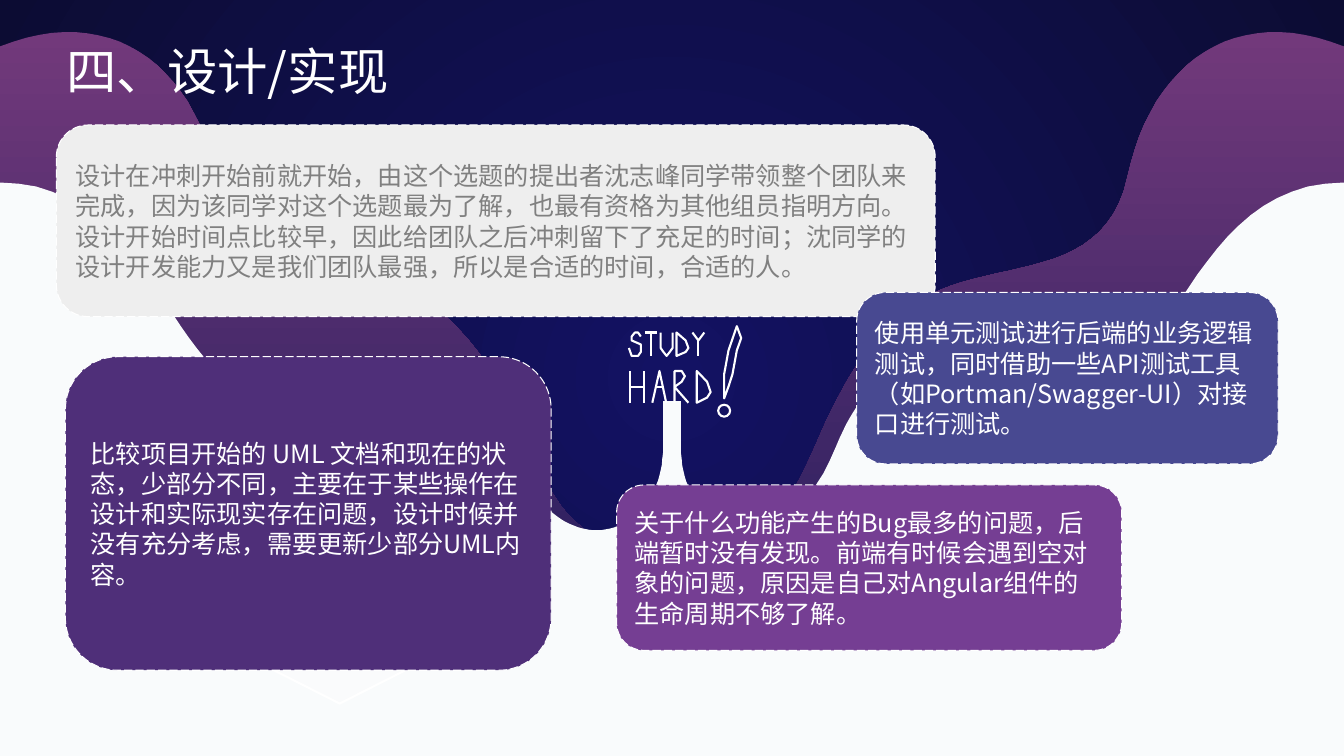
from math import cos, radians, sin

from lxml import etree
from pptx import Presentation
from pptx.dml.color import RGBColor
from pptx.enum.dml import MSO_LINE
from pptx.enum.shapes import MSO_SHAPE
from pptx.enum.text import MSO_ANCHOR, MSO_AUTO_SIZE, PP_ALIGN
from pptx.oxml import parse_xml
from pptx.oxml.ns import nsdecls, qn
from pptx.util import Cm, Pt

COLORS = {
    "white": "FFFFFF", "paper": "F9FBFC", "navy": "131263", "night": "0C0C33",
    "plum": "72397B", "violet": "3F2767", "ink": "0B1453",
    "light": "EEEEEE", "gray": "808080", "blue": "484991",
    "purple": "4F2F79", "orchid": "753E93",
}
FONT = "Noto Sans CJK SC"
WIDTH, HEIGHT = 33.87, 19.05
RADIAL = '<a:path path="circle"><a:fillToRect l="50000" t="50000" r="50000" b="50000"/></a:path>'
DOWNWARD = '<a:lin ang="5400000" scaled="0"/>'
CURVE_STEPS = 24


def draw_outline(shapes, points):
    units = [(round(x * 100), round(y * 100)) for x, y in points]
    builder = shapes.build_freeform(*units[0], scale=Cm(0.01))
    builder.add_line_segments(units[1:], close=units[0] == units[-1])
    shape = builder.convert_to_shape()
    shape.shadow.inherit = False
    return shape


def paint_gradient(shape, stops, direction):
    shape.fill.solid()
    stop_list = "".join(
        f'<a:gs pos="{position * 1000}"><a:srgbClr val="{COLORS[color]}">'
        f'<a:alpha val="{opacity * 1000}"/></a:srgbClr></a:gs>'
        for position, color, opacity in stops)
    gradient = parse_xml(f'<a:gradFill {nsdecls("a")} rotWithShape="1">'
                         f'<a:gsLst>{stop_list}</a:gsLst>{direction}</a:gradFill>')
    solid = shape.element.spPr.find(qn("a:solidFill"))
    solid.getparent().replace(solid, gradient)


presentation = Presentation()
presentation.slide_width = Cm(WIDTH)
presentation.slide_height = Cm(HEIGHT)
slide = presentation.slides.add_slide(presentation.slide_layouts[5])
white = RGBColor.from_string(COLORS["white"])

backdrop = slide.shapes.add_shape(MSO_SHAPE.RECTANGLE, 0, 0, Cm(WIDTH), Cm(HEIGHT))
backdrop.shadow.inherit = False
backdrop.line.fill.background()
paint_gradient(backdrop, [(0, "navy", 100), (100, "night", 100)], RADIAL)

# Left halves only: x, y, heading in degrees, reach of the curve before and after the anchor
purple_anchors = [
    (0, 1.17, -22, 0, 2.93),
    (5.46, 4.47, 78, 3, 3),
    (11.18, 7.92, 42, 2.41, 3.81),
    (WIDTH / 2, 13.94, 0, 3.98, 0),
]
white_anchors = [
    (0, 4.6, 0, 0, 3.9),
    (6.7, 9.88, 0, 2.4, 1),
    (10.24, 9.17, 0, 0.9, 1.06),
    (12.8, 11.25, 68, 1.72, 1.62),
    (15.04, 13.36, 0, 0.77, 0.91),
    (16.71, 11.25, -90, 1.27, 0),
    (16.71, 10.11, -90, 0, 0),
]
waves = []
for anchors in (purple_anchors, white_anchors):
    left_half = [anchors[0][:2]]
    for start, end in zip(anchors, anchors[1:]):
        start_x, start_y, start_heading, _, reach_out = start
        end_x, end_y, end_heading, reach_in, _ = end
        start_angle, end_angle = radians(start_heading), radians(end_heading)
        controls = [
            (start_x, start_y),
            (start_x + reach_out * cos(start_angle), start_y + reach_out * sin(start_angle)),
            (end_x - reach_in * cos(end_angle), end_y - reach_in * sin(end_angle)),
            (end_x, end_y),
        ]
        for step in range(1, CURVE_STEPS + 1):
            t = step / CURVE_STEPS
            weights = ((1 - t) ** 3, 3 * t * (1 - t) ** 2, 3 * t * t * (1 - t), t ** 3)
            left_half.append(tuple(
                sum(weight * control[axis] for weight, control in zip(weights, controls))
                for axis in (0, 1)))
    right_half = [(WIDTH - x, y) for x, y in reversed(left_half)]
    corners = [(WIDTH, HEIGHT), (0, HEIGHT), left_half[0]]
    wave = draw_outline(slide.shapes, left_half + right_half + corners)
    wave.line.fill.background()
    waves.append(wave)
purple_wave, white_wave = waves
paint_gradient(purple_wave, [(0, "plum", 100), (56, "violet", 100), (100, "ink", 100)], DOWNWARD)
white_wave.fill.solid()
white_wave.fill.fore_color.rgb = RGBColor.from_string(COLORS["paper"])

title = slide.shapes.title
title.element.getparent().append(title.element)
title.left, title.top, title.width, title.height = Cm(1.42), Cm(0.86), Cm(9.53), Cm(1.8)

hexagon = slide.shapes.add_shape(
    MSO_SHAPE.FLOWCHART_PREPARATION, Cm(4.8), Cm(11), Cm(7.52), Cm(5.94))
hexagon.rotation = 90
hexagon.shadow.inherit = False
paint_gradient(hexagon, [(0, "white", 0), (100, "white", 39)], RADIAL)
hexagon.line.color.rgb = white
hexagon.line.width = Pt(1.5)

cards = [
    (1.42, 3.15, 22.15, 4.83, "light", "gray",
     "设计在冲刺开始前就开始，由这个选题的提出者沈志峰同学带领整个团队来完成，因为该同学对这个选题最为了解，"
     "也最有资格为其他组员指明方向。设计开始时间点比较早，因此给团队之后冲刺留下了充足的时间；"
     "沈同学的设计开发能力又是我们团队最强，所以是合适的时间，合适的人。"),
    (21.59, 7.37, 10.62, 4.32, "blue", "white",
     "使用单元测试进行后端的业务逻辑测试，同时借助一些API测试工具（如Portman/Swagger-UI）对接口进行测试。"),
    (1.65, 8.99, 12.24, 7.9, "purple", "white",
     "比较项目开始的 UML 文档和现在的状态，少部分不同，主要在于某些操作在设计和实际现实存在问题，"
     "设计时候并没有充分考虑，需要更新少部分UML内容。"),
    (15.54, 12.22, 12.73, 4.17, "orchid", "white",
     "关于什么功能产生的Bug最多的问题，后端暂时没有发现。前端有时候会遇到空对象的问题，"
     "原因是自己对Angular组件的生命周期不够了解。"),
]
texts = [(title, "四、设计/实现", 36, "white")]
for left, top, width, height, fill, color, text in cards:
    card = slide.shapes.add_shape(
        MSO_SHAPE.ROUNDED_RECTANGLE, Cm(left), Cm(top), Cm(width), Cm(height))
    card.shadow.inherit = False
    card.fill.solid()
    card.fill.fore_color.rgb = RGBColor.from_string(COLORS[fill])
    card.line.color.rgb = white
    card.line.width = Pt(0.75)
    card.line.dash_style = MSO_LINE.LONG_DASH
    texts.append((card, text, 18, color))

for shape, text, size, color in texts:
    frame = shape.text_frame
    frame.text = text
    frame.word_wrap = shape is not title
    frame.auto_size = MSO_AUTO_SIZE.NONE
    frame.vertical_anchor = MSO_ANCHOR.MIDDLE
    frame.margin_left = frame.margin_right = Cm(0.25)
    frame.margin_top = frame.margin_bottom = Cm(0.13 if shape is title else 0.25)
    paragraph = frame.paragraphs[0]
    paragraph.alignment = PP_ALIGN.LEFT
    paragraph.font.size = Pt(size)
    paragraph.font.name = FONT
    paragraph.font.color.rgb = RGBColor.from_string(COLORS[color])
    defaults = paragraph._p.find(".//" + qn("a:defRPr"))
    etree.SubElement(defaults, qn("a:ea")).set("typeface", FONT)

# Each stroke lists column-and-row digits on a letter grid of 4 by 6
GRID_COLUMNS, GRID_ROWS = 4, 6
LETTER_STROKES = {
    "S": ["41 30 20 11 12 43 45 36 16 04"],
    "T": ["00 40", "20 26"],
    "U": ["00 04 15 26 35 44 40"],
    "D": ["00 32 44 35 06 00"],
    "Y": ["00 22 40", "22 26"],
    "H": ["00 06", "40 46", "03 43"],
    "A": ["06 20 46", "13 33"],
    "R": ["06 00 20 31 22 03 46"],
    "!": ["30 41 32 24 15 06 04 12 30"],
}
words = [
    ("STUDY", 15.85, 8.38, 0.3, 0.59, 0.4),
    ("HARD", 15.88, 9.35, 0.35, 0.8, 0.56),
    ("!", 18.25, 8.22, 0.43, 1.82, 0),
]
lettering = slide.shapes.add_group_shape()
for word, word_left, top, letter_width, letter_height, pitch in words:
    for index, letter in enumerate(word):
        left = word_left + index * pitch
        for stroke in LETTER_STROKES[letter]:
            draw_outline(lettering.shapes, [
                (left + int(column) * letter_width / GRID_COLUMNS,
                 top + int(row) * letter_height / GRID_ROWS)
                for column, row in stroke.split()])
dot = lettering.shapes.add_shape(MSO_SHAPE.OVAL, Cm(18.1), Cm(10.2), Cm(0.3), Cm(0.3))
dot.shadow.inherit = False
for stroke_shape in lettering.shapes:
    stroke_shape.fill.background()
    stroke_shape.line.color.rgb = white
    stroke_shape.line.width = Pt(1.5)

presentation.save("out.pptx")
